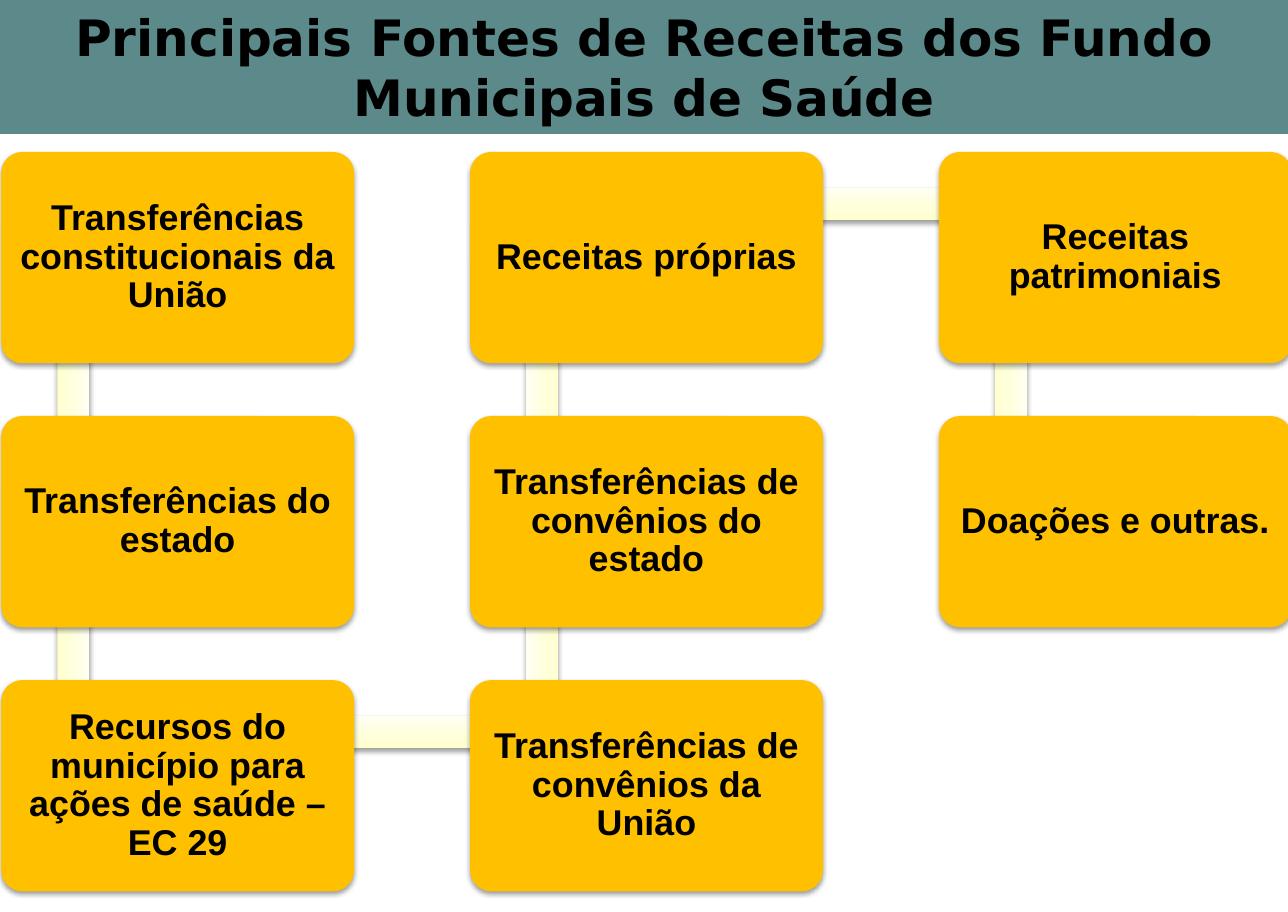
from lxml import etree
from pptx import Presentation, util as u
from pptx.dml.color import RGBColor
from pptx.enum import shapes, text
from pptx.oxml.ns import qn

# Content: the chain of sources, with (column, row) of each box
TITLE = "Principais Fontes de Receitas dos Fundo Municipais de Saúde"
SOURCES = [
    ("Transferências constitucionais da União", 0, 0),
    ("Transferências do estado", 0, 1),
    ("Recursos do município para ações de saúde – EC 29", 0, 2),
    ("Transferências de convênios da União", 1, 2),
    ("Transferências de convênios do estado", 1, 1),
    ("Receitas próprias", 1, 0),
    ("Receitas patrimoniais", 2, 0),
    ("Doações e outras.", 2, 1),
]
BAR_STOPS = [(0, "FFFFCD"), (35, "FFFFDA"), (100, "FFFFF1")]

# Grid, in inches
W, H, TITLE_H = 10, 7.08, 1.04
LEFT, TOP, COL, ROW = 0.01, 1.18, 3.64, 2.05
BOX_W, BOX_H = 2.74, 1.64
BAR, BAR_X, BAR_Y = 0.25, 0.56, 0.28  # thickness and offsets inside a box
ACROSS, DOWN = 3.63, 2.04             # bar lengths


def color(hex_string):
    return RGBColor.from_string(hex_string)


def write(shape, words, size, font, anchor, inset_x, inset_y, spacing=1.0):
    tf = shape.text_frame
    tf.word_wrap = True
    tf.auto_size = text.MSO_AUTO_SIZE.NONE
    tf.vertical_anchor = anchor
    tf.margin_left = tf.margin_right = u.Inches(inset_x)
    tf.margin_top = tf.margin_bottom = u.Inches(inset_y)
    p = tf.paragraphs[0]
    p.alignment = text.PP_ALIGN.CENTER
    p.line_spacing = spacing
    r = p.add_run()
    r.text = words
    r.font.size, r.font.name, r.font.bold = u.Pt(size), font, True
    r.font.color.rgb = color("000000")


def add_part(kind, x, y, w, h):
    """Shape without outline and with a soft shadow below."""
    sp = s.shapes.add_shape(kind, *map(u.Inches, (x, y, w, h)))
    sp.line.fill.background()
    sp.shadow.inherit = False
    effects = sp._element.spPr.find(qn("a:effectLst"))
    shadow = etree.SubElement(effects, qn("a:outerShdw"), blurRad=str(u.Pt(3.1)),
                              dist=str(u.Pt(1.6)), dir="5400000", rotWithShape="0")
    tint = etree.SubElement(shadow, qn("a:srgbClr"), val="000000")
    etree.SubElement(tint, qn("a:alpha"), val="38000")
    return sp


def add_bar(x, y, length, rotation=0):
    sp = add_part(shapes.MSO_SHAPE.RECTANGLE, x, y, length, BAR)
    sp.rotation = rotation
    sp.fill.gradient()
    sp.fill.gradient_angle = 90
    stops = sp._element.spPr.find(qn("a:gradFill")).find(qn("a:gsLst"))
    for old in list(stops):
        stops.remove(old)
    for pos, tone in BAR_STOPS:
        gs = etree.SubElement(stops, qn("a:gs"), pos=str(pos * 1000))
        etree.SubElement(gs, qn("a:srgbClr"), val=tone)


prs = Presentation()
prs.slide_width, prs.slide_height = u.Inches(W), u.Inches(H)
s = prs.slides.add_slide(prs.slide_layouts[5])

# Title band
title = s.shapes.title
title.left, title.top = 0, 0
title.width, title.height = u.Inches(W), u.Inches(TITLE_H)
title.fill.solid()
title.fill.fore_color.rgb = color("5C8A8A")
write(title, TITLE, 28, "DejaVu Sans", text.MSO_ANCHOR.TOP, 0.1, 0.05)

# Bars from each source to the next, behind the boxes
for (_, col, row), (_, next_col, next_row) in zip(SOURCES, SOURCES[1:]):
    x = LEFT + col * COL + BAR_X
    if col != next_col:
        add_bar(x, TOP + row * ROW + BAR_Y, ACROSS)
    else:
        middle = TOP + min(row, next_row) * ROW + BAR_Y + BAR / 2 + DOWN / 2
        add_bar(x - DOWN / 2, middle - BAR / 2, DOWN, 90 if next_row > row else 270)

# Boxes
for words, col, row in SOURCES:
    box = add_part(shapes.MSO_SHAPE.ROUNDED_RECTANGLE,
                   LEFT + col * COL, TOP + row * ROW, BOX_W, BOX_H)
    box.adjustments[0] = 0.1
    box.fill.solid()
    box.fill.fore_color.rgb = color("FFC000")
    write(box, words, 20, "Arial", text.MSO_ANCHOR.MIDDLE, 0.08, 0.08, spacing=0.9)

prs.save("out.pptx")
